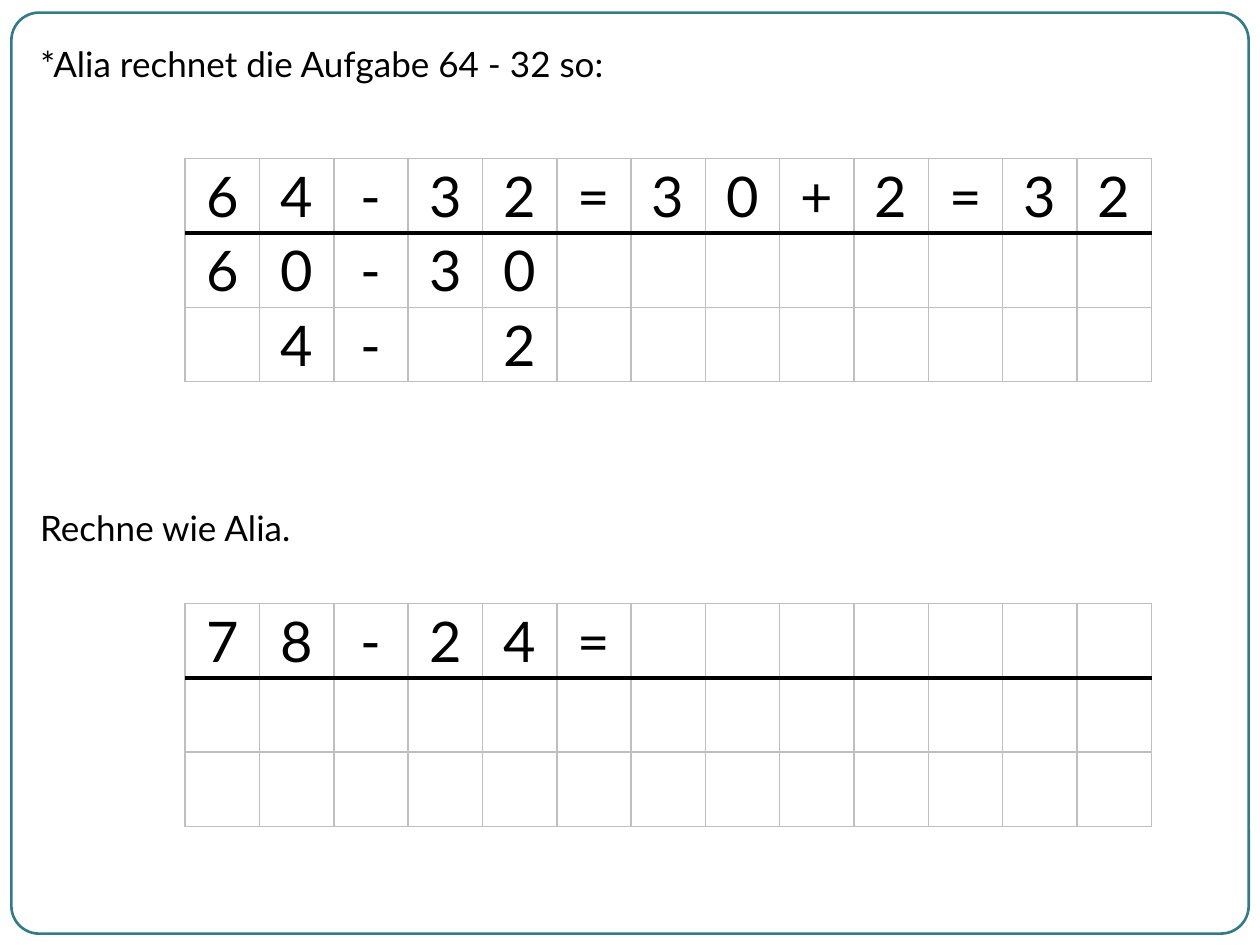
from lxml.etree import SubElement
from pptx import Presentation
from pptx.dml.color import RGBColor
from pptx.enum.shapes import MSO_CONNECTOR as Connector, MSO_SHAPE as Shape
from pptx.enum.text import MSO_ANCHOR as Anchor, MSO_AUTO_SIZE as AutoSize, PP_ALIGN as Align
from pptx.oxml.ns import qn
from pptx.util import Inches, Pt

BLACK = RGBColor(0x00, 0x00, 0x00)
GRID_GREY = RGBColor(0xBF, 0xBF, 0xBF)
FRAME_TEAL = RGBColor(0x32, 0x7B, 0x8A)
FONT = "Lato"
COLUMNS, ROWS = 13, 3
CELL = 0.59


def style_span(span, size):
    span.font.name = FONT
    span.font.size = Pt(size)
    span.font.color.rgb = BLACK


def add_frame(page, left, top, width, height):
    frame = page.shapes.add_shape(Shape.ROUNDED_RECTANGLE, Inches(left), Inches(top),
                                  Inches(width), Inches(height))
    frame.adjustments[0] = 0.03
    frame.shadow.inherit = False
    frame.fill.background()
    frame.line.color.rgb = FRAME_TEAL
    frame.line.width = Pt(1.5)


def write_instruction(box, text, left, top, width, height):
    box.left, box.top = Inches(left), Inches(top)
    box.width, box.height = Inches(width), Inches(height)
    text_frame = box.text_frame
    text_frame.text = text
    text_frame.word_wrap = True
    text_frame.auto_size = AutoSize.NONE
    text_frame.vertical_anchor = Anchor.TOP
    para = text_frame.paragraphs[0]
    para.alignment = Align.LEFT
    style_span(para.runs[0], 20)


def add_cell_borders(cell):
    properties = cell._tc.get_or_add_tcPr()
    for index, side in enumerate(("a:lnL", "a:lnR", "a:lnT", "a:lnB")):
        border = properties.makeelement(qn(side), {"w": str(Pt(1))})
        properties.insert(index, border)
        fill = SubElement(border, qn("a:solidFill"))
        SubElement(fill, qn("a:srgbClr"), val=str(GRID_GREY))


def fill_cell(cell, symbol):
    cell.fill.background()
    add_cell_borders(cell)
    cell.margin_left = cell.margin_right = cell.margin_top = cell.margin_bottom = 0
    cell.vertical_anchor = Anchor.MIDDLE
    if symbol.strip():
        cell.text = symbol
        para = cell.text_frame.paragraphs[0]
        para.alignment = Align.CENTER
        style_span(para.runs[0], 32)


def add_calculation(page, lines, left, top):
    """Place a squared grid with one symbol per cell and a rule below its first row."""
    width = COLUMNS * CELL
    table = page.shapes.add_table(ROWS, COLUMNS, Inches(left), Inches(top),
                                  Inches(width), Inches(ROWS * CELL)).table
    table.first_row = table.horz_banding = False
    for column in table.columns:
        column.width = Inches(CELL)
    for row, line in zip(table.rows, lines):
        row.height = Inches(CELL)
        for cell, symbol in zip(row.cells, line.ljust(COLUMNS)):
            fill_cell(cell, symbol)

    # Rule between the task and the partial steps
    rule_y = Inches(top + CELL)
    rule = page.shapes.add_connector(Connector.STRAIGHT, Inches(left), rule_y,
                                     Inches(left + width), rule_y)
    rule.line.color.rgb = BLACK
    rule.line.width = Pt(2.25)
    SubElement(rule._element.spPr, qn("a:effectLst"))


def build_task_page(deck):
    page = deck.slides.add_slide(deck.slide_layouts[5])
    add_frame(page, 0.09, 0.1, 9.82, 7.31)

    # Worked example
    write_instruction(page.shapes.title, "*Alia rechnet die Aufgabe 64 - 32 so:",
                      0.22, 0.29, 7.16, 0.44)
    add_calculation(page, ["64-32=30+2=32", "60-30", " 4- 2"], 1.47, 1.26)

    # Exercise
    box = page.shapes.add_textbox(0, 0, 0, 0)
    write_instruction(box, "Rechne wie Alia.", 0.22, 3.97, 9.61, 0.44)
    add_calculation(page, ["78-24=", "", ""], 1.47, 4.79)


def main():
    deck = Presentation()
    deck.slide_width, deck.slide_height = Inches(10), Inches(7.5)
    build_task_page(deck)
    deck.save("out.pptx")


if __name__ == "__main__":
    main()
